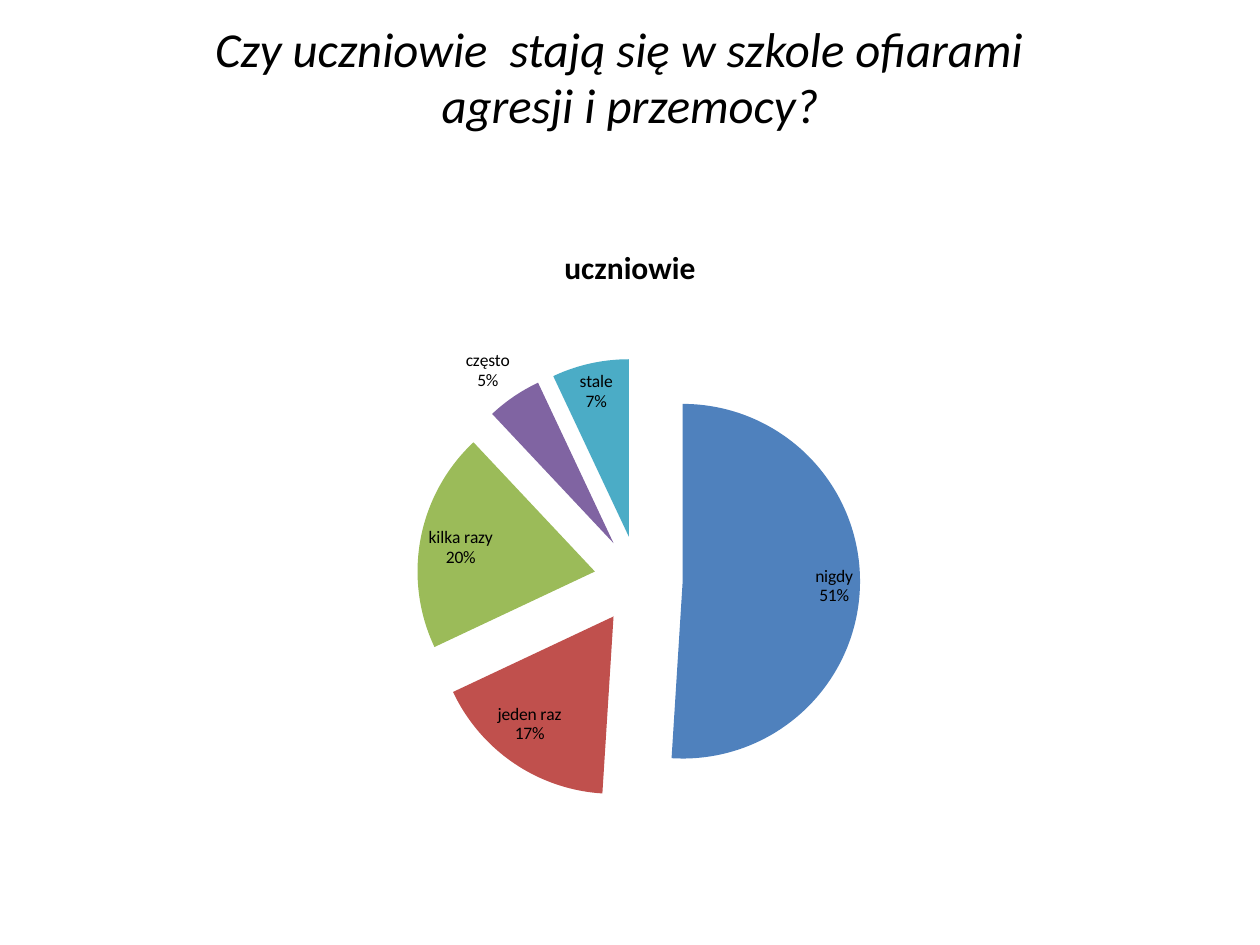
from pptx import Presentation
from pptx.chart.data import CategoryChartData as ChartData
from pptx.dml.color import RGBColor
from pptx.enum.chart import XL_CHART_TYPE as ChartType, XL_LABEL_POSITION as LabelPosition
from pptx.enum.text import MSO_ANCHOR as Anchor, MSO_AUTO_SIZE as AutoSize, PP_ALIGN as Align
from pptx.oxml import parse_xml
from pptx.oxml.ns import nsdecls
from pptx.util import Cm, Pt

FONT = "Calibri"
BLACK = "000000"
TITLE = "Czy uczniowie  stają się w szkole ofiarami  \vagresji i przemocy?"
SERIES_NAME = "uczniowie"
# answer: (percent, slice colour)
ANSWERS = {
    "nigdy": (51, "4F81BD"),
    "jeden raz": (17, "C0504D"),
    "kilka razy": (20, "9BBB59"),
    "często": (5, "8064A2"),
    "stale": (7, "4BACC6"),
}
EXPLOSION = 25


def set_attributes(target, values):
    for name, value in values.items():
        setattr(target, name, value)


def set_color(color_format, color):
    color_format.rgb = RGBColor.from_string(color)


def format_font(font, size, bold=False, italic=False):
    set_attributes(font, {"name": FONT, "size": Pt(size), "bold": bold, "italic": italic})
    set_color(font.color, BLACK)


def fill_title(shape):
    set_attributes(shape, {"left": Cm(1.27), "top": Cm(0.76),
                           "width": Cm(22.86), "height": Cm(3.18)})
    frame = shape.text_frame
    # The deep bottom margin lifts the two lines above the middle
    set_attributes(frame, {"text": TITLE, "word_wrap": True, "auto_size": AutoSize.NONE,
                           "vertical_anchor": Anchor.MIDDLE, "margin_bottom": Cm(1.65)})
    paragraph = frame.paragraphs[0]
    set_attributes(paragraph, {"alignment": Align.CENTER, "line_spacing": 0.96})
    for run in paragraph.runs:
        format_font(run.font, 27.9, italic=True)


def add_pie(slide):
    data = ChartData()
    data.categories = list(ANSWERS)
    data.add_series(SERIES_NAME, [percent for percent, _ in ANSWERS.values()])
    chart = slide.shapes.add_chart(ChartType.PIE, Cm(1.27), Cm(4.45),
                                   Cm(22.86), Cm(12.57), data).chart
    format_font(chart.font, 10)
    set_attributes(chart, {"has_legend": False, "has_title": True})
    title_frame = chart.chart_title.text_frame
    title_frame.text = SERIES_NAME
    format_font(title_frame.paragraphs[0].runs[0].font, 18, bold=True)

    # Slices, pulled apart
    plot = chart.plots[0]
    plot.vary_by_categories = True
    series = plot.series[0]
    for index, (_, color) in enumerate(ANSWERS.values()):
        fill = series.points[index].format.fill
        fill.solid()
        set_color(fill.fore_color, color)
    explosion = parse_xml(f'<c:explosion {nsdecls("c")} val="{EXPLOSION}"/>')
    series._element.find("{*}dPt").addprevious(explosion)
    for point in series._element.findall("{*}dPt"):
        point.find("{*}spPr").addprevious(
            parse_xml(f'<c:explosion {nsdecls("c")} val="{EXPLOSION}"/>'))

    # Labels
    plot.has_data_labels = True
    labels = plot.data_labels
    set_attributes(labels, {"show_category_name": True, "show_percentage": True,
                            "show_value": False, "position": LabelPosition.BEST_FIT})
    format_font(labels.font, 10)


def main():
    presentation = Presentation()
    set_attributes(presentation, {"slide_width": Cm(25.4), "slide_height": Cm(19.05)})
    slide = presentation.slides.add_slide(presentation.slide_layouts[5])
    fill_title(slide.shapes.title)
    add_pie(slide)
    presentation.save("out.pptx")


if __name__ == "__main__":
    main()
